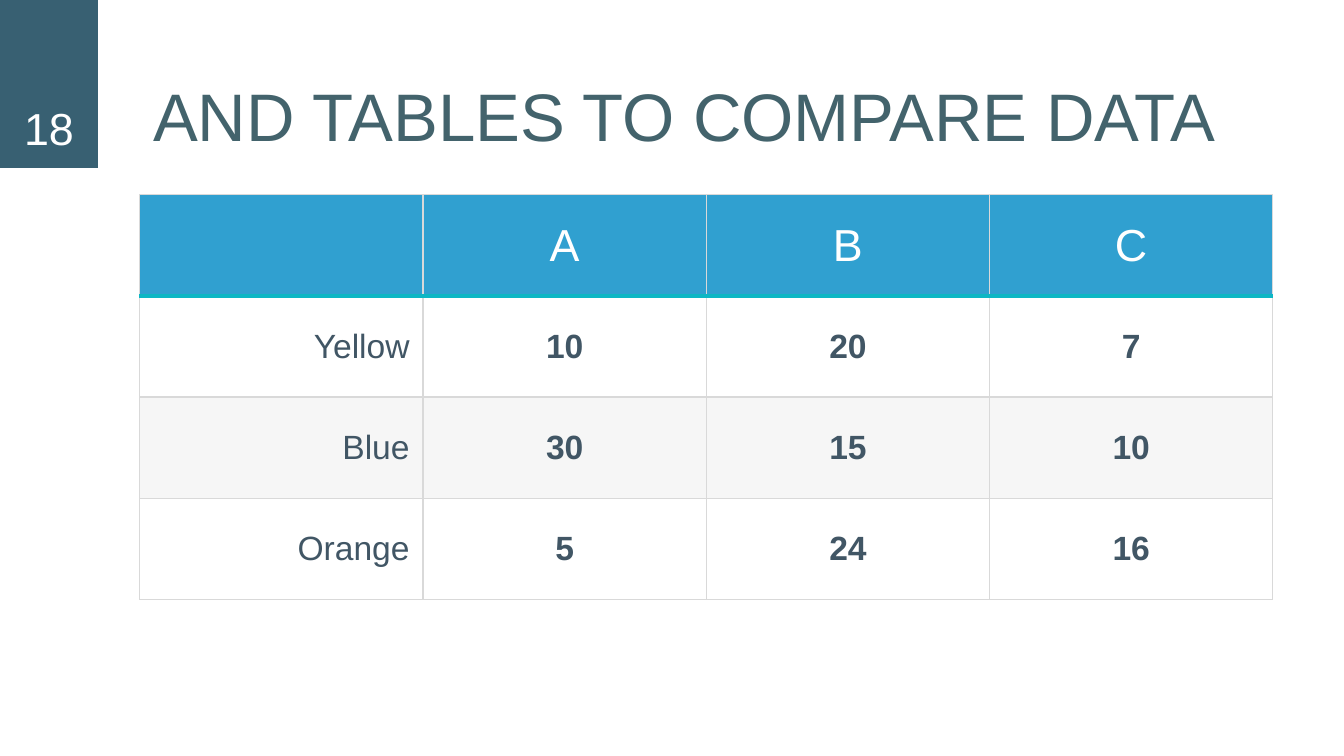
from lxml.etree import SubElement
from pptx import Presentation
from pptx.dml.color import RGBColor
from pptx.enum.shapes import MSO_SHAPE
from pptx.enum.text import MSO_ANCHOR, MSO_AUTO_SIZE, PP_ALIGN
from pptx.oxml.ns import qn
from pptx.util import Inches, Pt

COLORS = {
    "band": "386072",
    "title": "43636C",
    "header": "30A0D0",
    "header_rule": "0DB7C4",
    "grid": "D9D9D9",
    "body": "415665",
    "stripe": "F6F6F6",
    "white": "FFFFFF",
}
FONT = "Arial"
ROWS = [
    ["", "A", "B", "C"],
    ["Yellow", "10", "20", "7"],
    ["Blue", "30", "15", "10"],
    ["Orange", "5", "24", "16"],
]


def rgb(name):
    return RGBColor.from_string(COLORS[name])


def add_text(text_frame, text, size, color, align, bold=False):
    paragraph = text_frame.paragraphs[0]
    paragraph.alignment = align
    run = paragraph.add_run()
    run.text = text
    run.font.name = FONT
    run.font.size = Pt(size)
    run.font.bold = bold
    run.font.color.rgb = rgb(color)


def set_frame(text_frame):
    text_frame.word_wrap = True
    text_frame.auto_size = MSO_AUTO_SIZE.NONE
    text_frame.vertical_anchor = MSO_ANCHOR.BOTTOM
    text_frame.margin_left = text_frame.margin_right = Inches(0.1)
    text_frame.margin_top = text_frame.margin_bottom = Inches(0.1)


def add_title(slide, text):
    title = slide.shapes.title
    title.left, title.top = Inches(1.04), Inches(0.1)
    title.width, title.height = Inches(8.76), Inches(1.15)
    set_frame(title.text_frame)
    add_text(title.text_frame, text, 36, "title", PP_ALIGN.LEFT)


def add_slide_number(slide, text):
    band = slide.shapes.add_shape(
        MSO_SHAPE.RECTANGLE, 0, 0, Inches(0.73), Inches(1.25))
    band.shadow.inherit = False
    band.fill.solid()
    band.fill.fore_color.rgb = rgb("band")
    band.line.fill.background()
    set_frame(band.text_frame)
    add_text(band.text_frame, text, 24, "white", PP_ALIGN.CENTER)


def set_border(cell, side, color, width):
    properties = cell._tc.get_or_add_tcPr()
    line = SubElement(properties, qn(f"a:ln{side}"), w=str(Pt(width)))
    fill = SubElement(line, qn("a:solidFill"))
    SubElement(fill, qn("a:srgbClr"), val=COLORS[color])


def format_cell(cell, row, column, text):
    # Borders: a thick rule separates the header from the body
    rule, grid = ("header_rule", 3), ("grid", 0.75)
    set_border(cell, "L", *grid)
    set_border(cell, "R", *grid)
    set_border(cell, "T", *(rule if row == 1 else grid))
    set_border(cell, "B", *(rule if row == 0 else grid))

    # Fill: header, then alternating stripes
    fill_color = "header" if row == 0 else "white" if row % 2 else "stripe"
    cell.fill.solid()
    cell.fill.fore_color.rgb = rgb(fill_color)

    # Text
    cell.vertical_anchor = MSO_ANCHOR.MIDDLE
    cell.margin_left = cell.margin_right = Inches(0.1)
    cell.margin_top = cell.margin_bottom = Inches(0.07)
    if not text:
        return
    if row == 0:
        add_text(cell.text_frame, text, 24, "white", PP_ALIGN.CENTER)
    elif column == 0:
        add_text(cell.text_frame, text, 18, "body", PP_ALIGN.RIGHT)
    else:
        add_text(cell.text_frame, text, 18, "body", PP_ALIGN.CENTER, bold=True)


def add_data_table(slide, rows):
    table = slide.shapes.add_table(
        len(rows), len(rows[0]),
        Inches(1.04), Inches(1.45), Inches(8.43), Inches(3.01)).table
    for row, values in enumerate(rows):
        for column, text in enumerate(values):
            format_cell(table.cell(row, column), row, column, text)


def main():
    # Widescreen 16:9 slide
    presentation = Presentation()
    presentation.slide_width = Inches(10)
    presentation.slide_height = Inches(10) * 9 // 16
    slide = presentation.slides.add_slide(presentation.slide_layouts[5])
    slide.background.fill.solid()
    slide.background.fill.fore_color.rgb = rgb("white")

    add_title(slide, "AND TABLES TO COMPARE DATA")
    add_data_table(slide, ROWS)
    add_slide_number(slide, "18")
    presentation.save("out.pptx")


if __name__ == "__main__":
    main()
